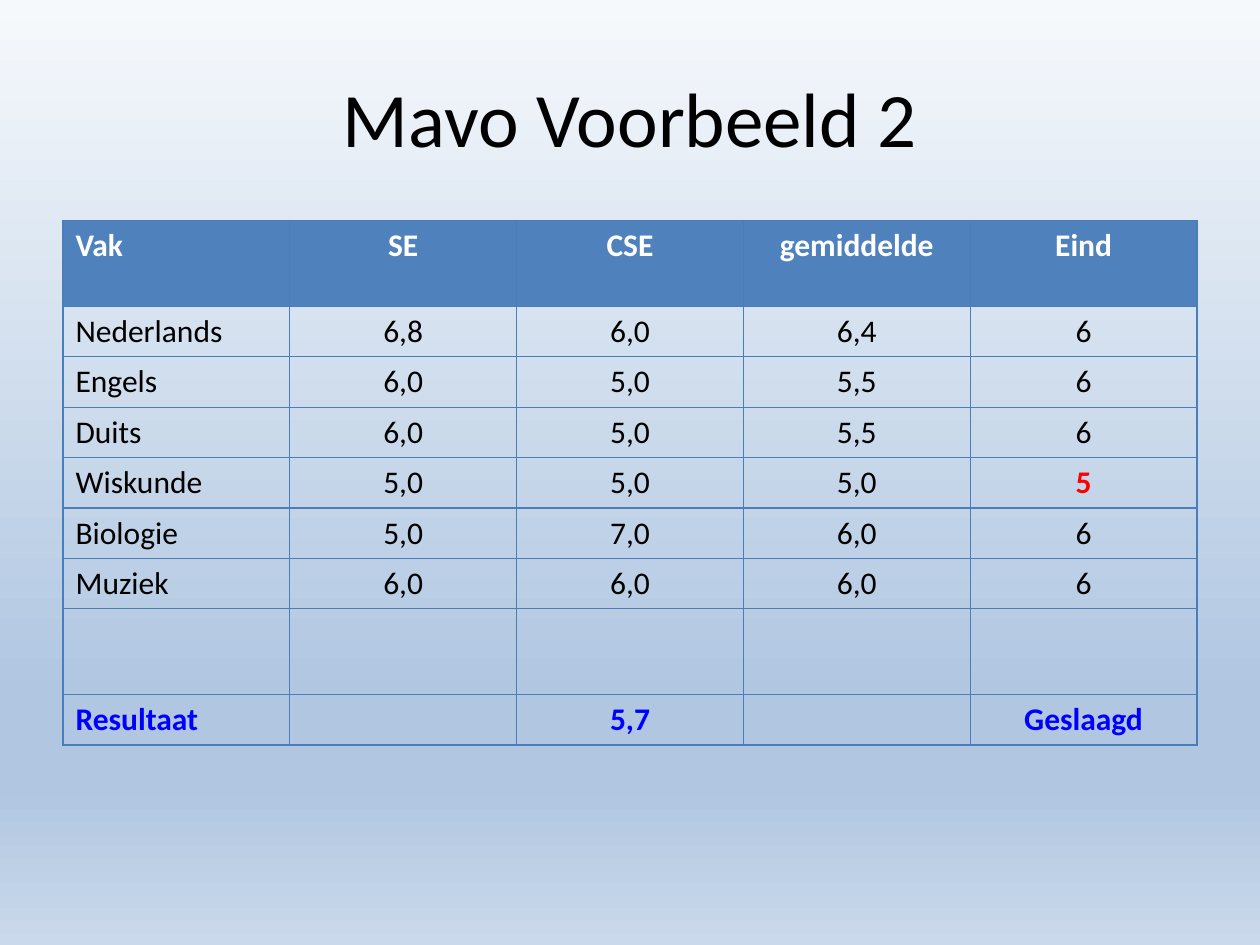
import copy

import lxml.etree
import pptx
import pptx.dml.color
import pptx.enum.text
import pptx.oxml.ns
import pptx.util

Inches = pptx.util.Inches
Pt = pptx.util.Pt
qn = pptx.oxml.ns.qn
ALIGN = pptx.enum.text.PP_ALIGN

BLACK, WHITE, RED, BLUE = "000000", "FFFFFF", "FF0000", "0000FF"
HEAD, EDGE = "4F81BD", "4A7EBB"
STOPS = [(0, "F6F9FC"), (0.74, "B0C6E1"), (0.83, "B0C6E1"), (1, "CAD9EB")]
BODY = {"name": "Calibri", "size": Pt(18), "bold": False}
BOLD = {**BODY, "bold": True}
ROWS = [
    ["Vak", "SE", "CSE", "gemiddelde", "Eind"],
    ["Nederlands", "6,8", "6,0", "6,4", "6"],
    ["Engels", "6,0", "5,0", "5,5", "6"],
    ["Duits", "6,0", "5,0", "5,5", "6"],
    ["Wiskunde", "5,0", "5,0", "5,0", "5"],
    ["Biologie", "5,0", "7,0", "6,0", "6"],
    ["Muziek", "6,0", "6,0", "6,0", "6"],
    [""] * 5,
    ["Resultaat", "", "5,7", "", "Geslaagd"],
]
LAST = len(ROWS) - 1
TALL = (0, LAST - 1)


def rgb(code):
    return pptx.dml.color.RGBColor.from_string(code)


def style(font, form, code):
    for key, value in form.items():
        setattr(font, key, value)
    font.color.rgb = rgb(code)


def paint_back(slide):
    fill = slide.background.fill
    fill.gradient()
    fill.gradient_angle = 270
    stops = slide.element.find(".//" + qn("a:gsLst"))
    while len(stops) < len(STOPS):
        stops.append(copy.deepcopy(stops[0]))
    for stop, (place, code) in zip(fill.gradient_stops, STOPS):
        stop.position = place
        stop.color.rgb = rgb(code)


def add_title(slide, left, top, width, height):
    box = slide.shapes.add_textbox(
        Inches(left), Inches(top), Inches(width), Inches(height))
    frame = box.text_frame
    frame.word_wrap = True
    frame.vertical_anchor = pptx.enum.text.MSO_ANCHOR.MIDDLE
    para = frame.paragraphs[0]
    para.text = "Mavo Voorbeeld 2"
    para.alignment = ALIGN.CENTER
    style(para.font, {"name": "Calibri", "size": Pt(44)}, BLACK)


def add_edges(cell):
    props = cell._tc.get_or_add_tcPr()
    for side in ("a:lnL", "a:lnR", "a:lnT", "a:lnB"):
        line = lxml.etree.SubElement(props, qn(side), w=str(Pt(0.75)))
        fill = lxml.etree.SubElement(line, qn("a:solidFill"))
        lxml.etree.SubElement(fill, qn("a:srgbClr"), val=EDGE)


def pick_look(row, text):
    """Return the font format and colour for a cell."""
    if row == 0:
        return BOLD, WHITE
    if row == LAST:
        return BOLD, BLUE
    if text == "5":
        return BOLD, RED
    return BODY, BLACK


def fill_cell(cell, row, col, text):
    add_edges(cell)
    if row == 0:
        cell.fill.solid()
        cell.fill.fore_color.rgb = rgb(HEAD)
    else:
        cell.fill.background()
    para = cell.text_frame.paragraphs[0]
    para.text = text
    para.alignment = ALIGN.CENTER if col else ALIGN.LEFT
    style(para.font, *pick_look(row, text))


def add_grades(slide, left, top, width, height):
    table = slide.shapes.add_table(
        len(ROWS), len(ROWS[0]),
        Inches(left), Inches(top), Inches(width), Inches(height)).table
    table.first_row = table.horz_banding = False
    tall = 0.68
    low = (height - tall * len(TALL)) / (len(ROWS) - len(TALL))
    for row, texts in enumerate(ROWS):
        table.rows[row].height = Inches(tall if row in TALL else low)
        for col, text in enumerate(texts):
            fill_cell(table.cell(row, col), row, col, text)


def main():
    deck = pptx.Presentation()
    deck.slide_width, deck.slide_height = Inches(10), Inches(7.5)
    slide = deck.slides.add_slide(deck.slide_layouts[6])
    paint_back(slide)
    add_title(slide, 0.5, 0.3, 9, 1.25)
    add_grades(slide, 0.5, 1.75, 9, 4.16)
    deck.save("out.pptx")


if __name__ == "__main__":
    main()
